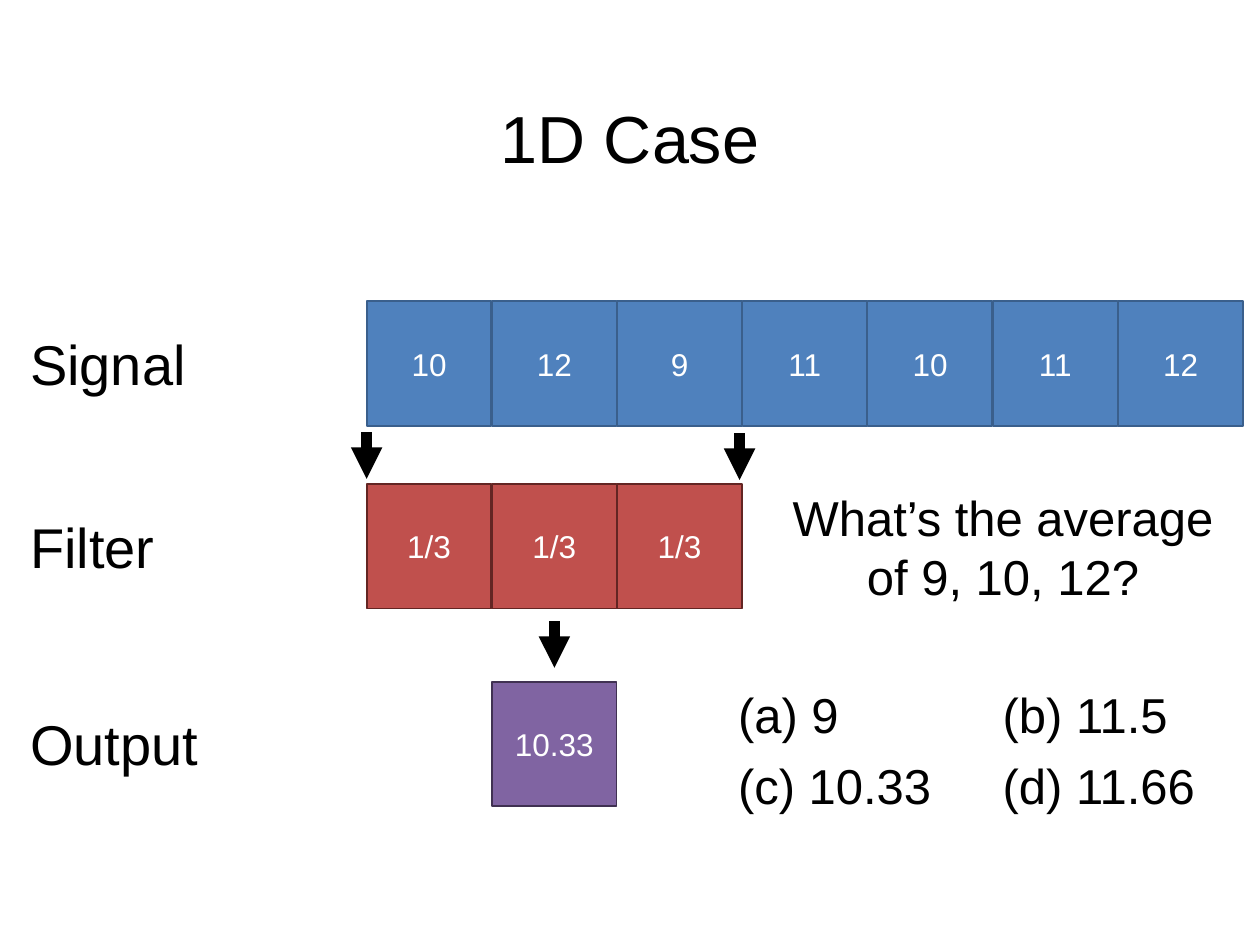
from pptx import Presentation
from pptx.dml.color import RGBColor
from pptx.enum.shapes import MSO_CONNECTOR, MSO_SHAPE
from pptx.enum.text import MSO_ANCHOR, PP_ALIGN
from pptx.oxml.ns import qn
from pptx.util import Inches, Pt
from lxml.etree import SubElement

THEME = {
    "font": "Arial", "text": "000000", "cell_text": "FFFFFF",
    "title_size": 38, "label_size": 32, "quiz_size": 28, "cell_size": 18,
    "signal": ("4F81BD", "3A5F8C"),
    "filter": ("C0504D", "632523"),
    "output": ("8064A2", "403152"),
}

# Content: label, colour key, top, first column, cell values
TITLE = "1D Case"
ROWS = [
    ("Signal", "signal", 2.39, 0, ["10", "12", "9", "11", "10", "11", "12"]),
    ("Filter", "filter", 3.84, 0, ["1/3", "1/3", "1/3"]),
    ("Output", "output", 5.41, 1, ["10.33"]),
]
QUESTION = "What’s the average of 9, 10, 12?"
ANSWERS = [["(a) 9", "(b) 11.5"], ["(c) 10.33", "(d) 11.66"]]
ARROWS = [(2.91, 3.43), (5.87, 3.44), (4.4, 4.93)]  # x, top

# Geometry in inches
GRID_LEFT, CELL, PITCH = 2.91, 0.99, 0.994
LABEL_LEFT, LABEL_W, LABEL_H = 0.14, 2.4, 0.64
ANSWER_LEFT, ANSWER_TOP, ANSWER_W, ANSWER_H, ANSWER_STEP = 5.76, 5.38, 2, 0.57, 2.1
ARROW_LENGTH = 0.37


def rgb(value):
    return RGBColor.from_string(value)


def write(sp, text, size, color=THEME["text"], align=PP_ALIGN.LEFT,
          anchor=MSO_ANCHOR.TOP, spacing=None):
    tf = sp.text_frame
    tf.word_wrap = True
    tf.vertical_anchor = anchor
    p = tf.paragraphs[0]
    p.alignment = align
    if spacing:
        p.line_spacing = spacing
    r = p.add_run()
    r.text = text
    r.font.name = THEME["font"]
    r.font.size = Pt(size)
    r.font.color.rgb = rgb(color)


def add_text(slide, box, text, size, **fmt):
    sp = slide.shapes.add_textbox(*map(Inches, box))
    write(sp, text, size, **fmt)


def add_cell(slide, left, top, text, colors):
    sp = slide.shapes.add_shape(MSO_SHAPE.RECTANGLE,
                                *map(Inches, (left, top, CELL, CELL)))
    sp.shadow.inherit = False
    fill, line = colors
    sp.fill.solid()
    sp.fill.fore_color.rgb = rgb(fill)
    sp.line.color.rgb = rgb(line)
    sp.line.width = Pt(1)
    write(sp, text, THEME["cell_size"], color=THEME["cell_text"],
          align=PP_ALIGN.CENTER, anchor=MSO_ANCHOR.MIDDLE)


def add_arrow(slide, x, top):
    cxn = slide.shapes.add_connector(
        MSO_CONNECTOR.STRAIGHT, *map(Inches, (x, top, x, top + ARROW_LENGTH)))
    cxn.line.color.rgb = rgb(THEME["text"])
    cxn.line.width = Pt(6)
    SubElement(cxn.line._get_or_add_ln(), qn("a:tailEnd"), type="triangle")
    SubElement(cxn._element.spPr, qn("a:effectLst"))


def main():
    prs = Presentation()
    prs.slide_width, prs.slide_height = Inches(10), Inches(7.5)
    slide = prs.slides.add_slide(prs.slide_layouts[5])

    # Title
    title = slide.shapes.title
    title.left, title.top, title.width, title.height = map(
        Inches, (0.69, 0.4, 8.62, 1.45))
    write(title, TITLE, THEME["title_size"], align=PP_ALIGN.CENTER,
          anchor=MSO_ANCHOR.MIDDLE, spacing=0.9)

    # Labelled rows of cells, each label centred on its row
    for label, key, top, first, values in ROWS:
        label_top = top + (CELL - LABEL_H) / 2
        add_text(slide, (LABEL_LEFT, label_top, LABEL_W, LABEL_H),
                 label, THEME["label_size"])
        for col, value in enumerate(values, first):
            add_cell(slide, GRID_LEFT + col * PITCH, top, value, THEME[key])

    # Question and answer grid
    add_text(slide, (6.05, 3.82, 3.82, 1.04), QUESTION, THEME["quiz_size"],
             align=PP_ALIGN.CENTER)
    for i, answers in enumerate(ANSWERS):
        for j, answer in enumerate(answers):
            add_text(slide, (ANSWER_LEFT + j * ANSWER_STEP,
                             ANSWER_TOP + i * ANSWER_H, ANSWER_W, ANSWER_H),
                     answer, THEME["quiz_size"])

    # Arrows between the rows
    for x, top in ARROWS:
        add_arrow(slide, x, top)

    prs.save("out.pptx")


if __name__ == "__main__":
    main()
